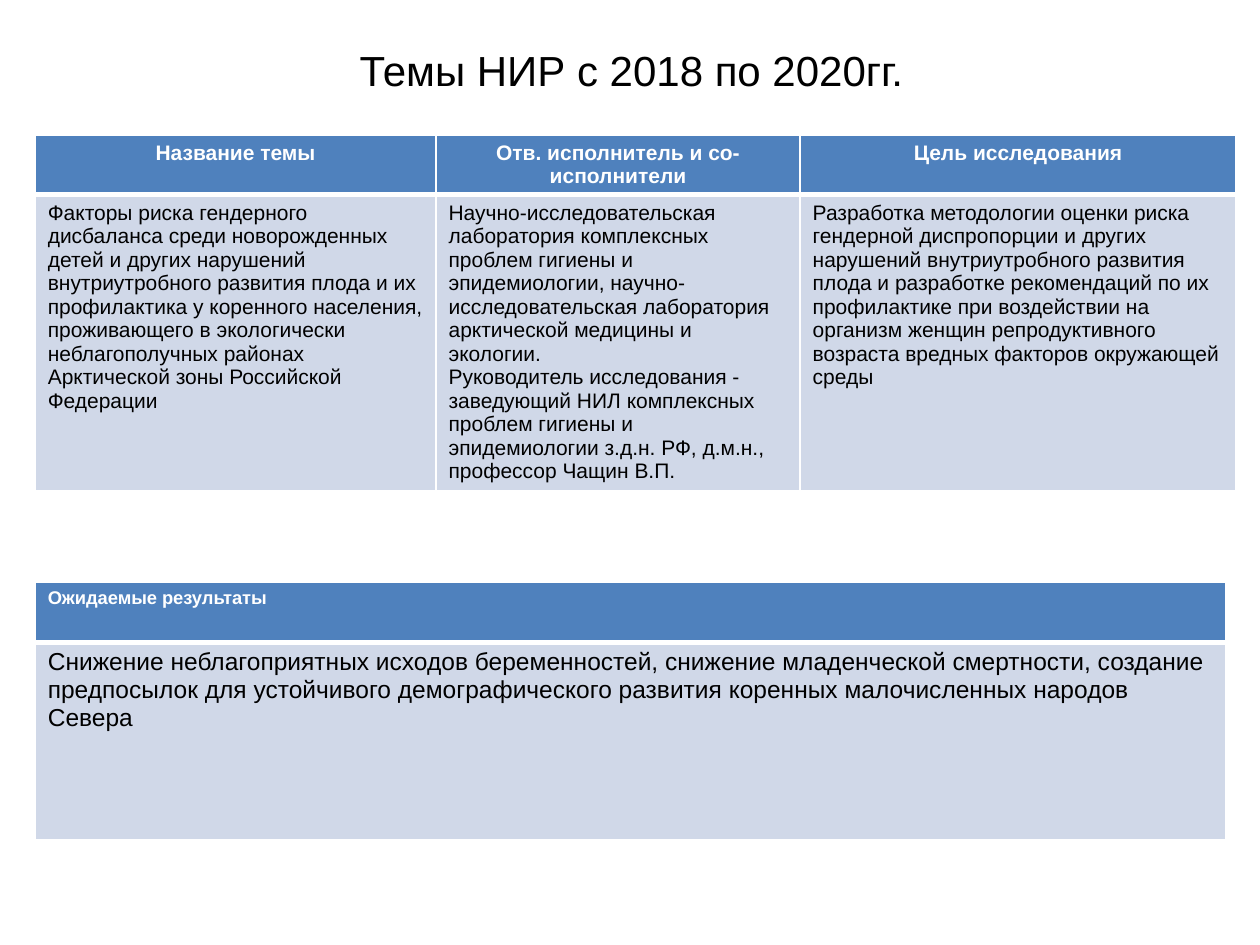
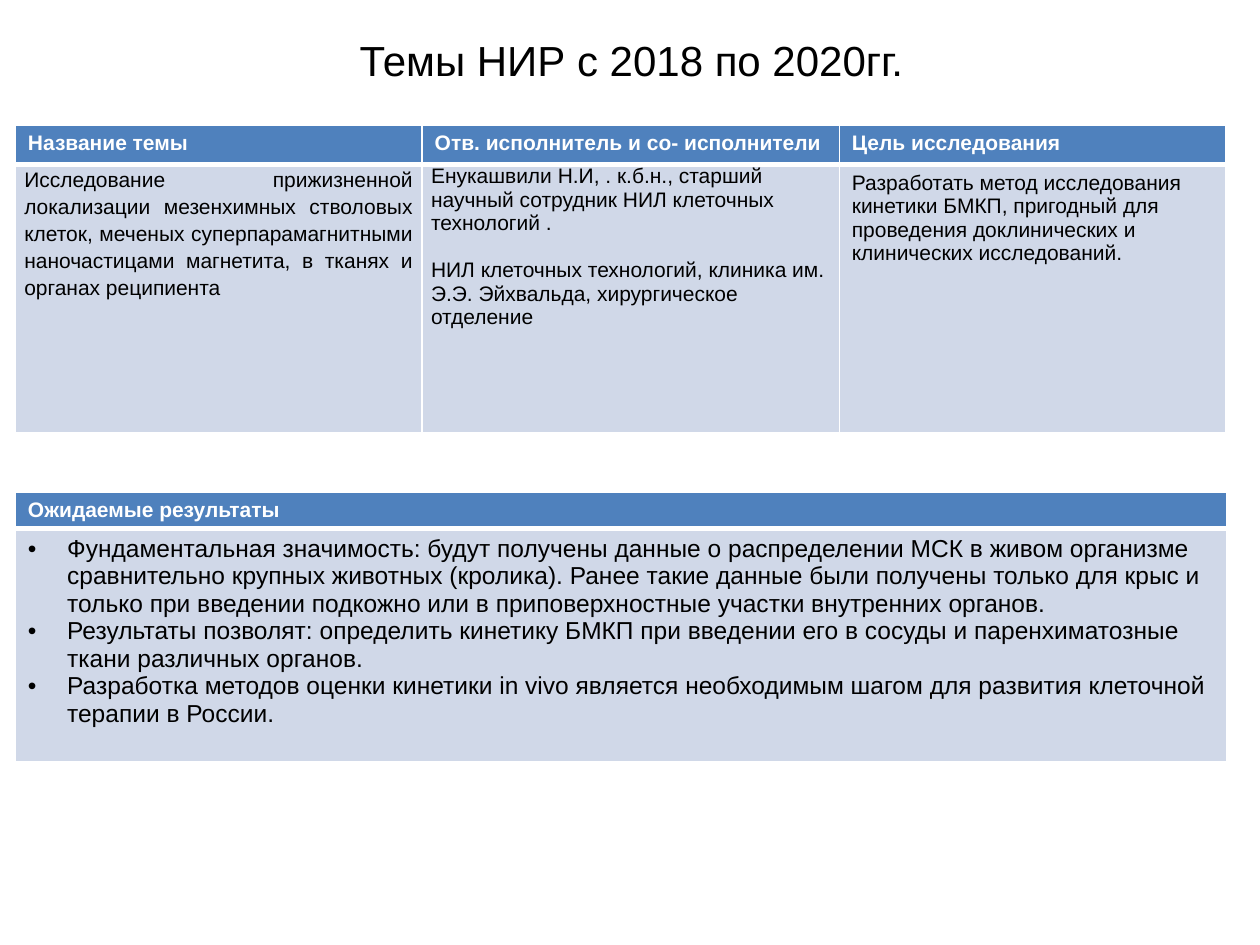
from dataclasses import dataclass

from lxml import etree
from pptx import Presentation
from pptx.dml.color import RGBColor
from pptx.enum.text import MSO_ANCHOR, MSO_AUTO_SIZE, PP_ALIGN
from pptx.oxml.ns import qn
from pptx.util import Cm, Pt

LEFT, CENTER, JUSTIFY = PP_ALIGN.LEFT, PP_ALIGN.CENTER, PP_ALIGN.JUSTIFY
MIDDLE = MSO_ANCHOR.MIDDLE
NO_FIT = MSO_AUTO_SIZE.NONE
TITLE_ONLY = 5


@dataclass(frozen=True)
class Theme:
    font: str = "Arial"
    ink: str = "000000"
    paper: str = "FFFFFF"
    header_fill: str = "4F81BD"
    body_fill: str = "D0D8E8"
    title_size: float = 24
    result_size: float = 14
    text_size: float = 12
    small_size: float = 10.5
    thin_line: float = 1
    thick_line: float = 3


THEME = Theme()
TITLE = "Темы НИР с 2018 по 2020гг."
TOPIC_HEADINGS = ["Название темы", "Отв. исполнитель и со- исполнители", "Цель исследования"]
RESULT_HEADING = "Ожидаемые результаты"


def write(frame, text, size=THEME.text_size, color=THEME.ink, bold=False, align=LEFT,
          line_spacing=None, gap=0, bullet=None):
    """Fill a text frame; each line of the text becomes a paragraph."""
    for index, line in enumerate(text.split("\n")):
        para = frame.paragraphs[0] if index == 0 else frame.add_paragraph()
        para.alignment = align
        if line_spacing:
            para.line_spacing = line_spacing
        if gap and index:
            para.space_before = Pt(gap)
        if bullet:
            add_bullet(para, bullet)
        span = para.add_run()
        span.text = line
        span.font.name = THEME.font
        span.font.size = Pt(size)
        span.font.bold = bold
        span.font.color.rgb = RGBColor.from_string(color)


def add_bullet(para, mark, indent=Cm(0.79)):
    properties = para._p.get_or_add_pPr()
    properties.set("marL", str(indent))
    properties.set("indent", str(-indent))
    etree.SubElement(properties, qn("a:buFont")).set("typeface", THEME.font)
    etree.SubElement(properties, qn("a:buChar")).set("char", mark)


def style_cell(cell, fill, thick_side):
    # Borders come before the fill in the cell properties
    properties = cell._tc.get_or_add_tcPr()
    for side in "LRTB":
        width = THEME.thick_line if side == thick_side else THEME.thin_line
        line = etree.SubElement(properties, qn(f"a:ln{side}"), w=str(Pt(width)))
        solid = etree.SubElement(line, qn("a:solidFill"))
        etree.SubElement(solid, qn("a:srgbClr")).set("val", THEME.paper)
    cell.fill.solid()
    cell.fill.fore_color.rgb = RGBColor.from_string(fill)


def add_title(page, top):
    title = page.shapes.title
    title.left, title.top, title.width, title.height = Cm(1.3), Cm(top), Cm(22.86), Cm(2.16)
    frame = title.text_frame
    frame.auto_size = NO_FIT
    frame.vertical_anchor = MIDDLE
    write(frame, TITLE, size=THEME.title_size, align=CENTER)


def add_table(page, left, top, widths, heights, headings, bodies, header_format=None):
    """Place a header row over one body row; each body is (text, format, tight margins)."""
    table = page.shapes.add_table(2, len(widths), Cm(left), Cm(top),
                                  Cm(sum(widths)), Cm(sum(heights))).table
    for column, width in zip(table.columns, widths):
        column.width = Cm(width)
    for row, height in zip(table.rows, heights):
        row.height = Cm(height)

    for index, (heading, (text, text_format, tight)) in enumerate(zip(headings, bodies)):
        header, body = table.cell(0, index), table.cell(1, index)
        style_cell(header, THEME.header_fill, "B")
        write(header.text_frame, heading, color=THEME.paper, bold=True, **(header_format or {}))
        style_cell(body, THEME.body_fill, "T")
        if tight:
            body.margin_left = body.margin_right = Cm(0.18)
            body.margin_top = body.margin_bottom = 0
        write(body.text_frame, text, **text_format)


def add_page(deck, title_top):
    page = deck.slides.add_slide(deck.slide_layouts[TITLE_ONLY])
    add_title(page, title_top)
    return page


def build_risk_page(deck):
    page = add_page(deck, 0.33)
    left = 0.71
    # Topic, team and aim
    add_table(page, left, 2.72, [8.08, 7.34, 8.79], [1.18, 5.96], TOPIC_HEADINGS, [
        ("Факторы риска гендерного дисбаланса среди новорожденных детей и других нарушений "
         "внутриутробного развития плода и их профилактика у коренного населения, проживающего "
         "в экологически неблагополучных районах Арктической зоны Российской Федерации",
         {}, False),
        ("Научно-исследовательская лаборатория комплексных проблем гигиены и эпидемиологии, "
         "научно-исследовательская лаборатория арктической медицины и экологии.\n"
         "Руководитель исследования - заведующий НИЛ комплексных проблем гигиены и "
         "эпидемиологии з.д.н. РФ, д.м.н., профессор Чащин В.П.", {}, False),
        ("Разработка методологии оценки риска гендерной диспропорции и других нарушений "
         "внутриутробного развития плода и разработке рекомендаций по их профилактике при "
         "воздействии на организм женщин репродуктивного возраста вредных факторов "
         "окружающей среды", {}, False),
    ], {"align": CENTER})
    # Expected results
    add_table(page, left, 11.73, [24], [1.22, 3.98], [RESULT_HEADING], [
        ("Снижение неблагоприятных исходов беременностей, снижение младенческой смертности, "
         "создание предпосылок для устойчивого демографического развития коренных "
         "малочисленных народов Севера", {"size": THEME.result_size}, False),
    ], {"size": THEME.small_size})


def build_stem_cell_page(deck):
    page = add_page(deck, 0.13)
    left = 0.31
    # Topic, team and aim
    add_table(page, left, 2.52, [8.2, 8.41, 7.8], [0.8, 5.4], TOPIC_HEADINGS, [
        ("Исследование прижизненной локализации мезенхимных стволовых клеток, меченых "
         "суперпарамагнитными наночастицами магнетита, в тканях и органах реципиента",
         {"align": JUSTIFY, "line_spacing": 1.15}, True),
        ("Енукашвили Н.И, . к.б.н., старший научный сотрудник НИЛ клеточных технологий .\n"
         "НИЛ клеточных технологий, клиника им. Э.Э. Эйхвальда, хирургическое отделение",
         {"gap": 13.5}, True),
        ("Разработать метод исследования кинетики БМКП, пригодный для проведения "
         "доклинических и клинических исследований.", {}, False),
    ])
    # Expected results
    add_table(page, left, 9.93, [24.41], [0.72, 4.7], [RESULT_HEADING], [
        ("Фундаментальная значимость: будут получены данные о распределении МСК в живом "
         "организме сравнительно крупных животных (кролика). Ранее такие данные были получены "
         "только для крыс и только при введении подкожно или в приповерхностные участки "
         "внутренних органов.\n"
         "Результаты позволят: определить кинетику БМКП при введении его в сосуды и "
         "паренхиматозные ткани различных органов.\n"
         "Разработка методов оценки кинетики in vivo является необходимым шагом для развития "
         "клеточной терапии в России.", {"size": THEME.result_size, "bullet": "•"}, False),
    ])


def main():
    deck = Presentation()
    deck.slide_width, deck.slide_height = Cm(25.4), Cm(19.05)
    build_risk_page(deck)
    build_stem_cell_page(deck)
    deck.save("out.pptx")


if __name__ == "__main__":
    main()
